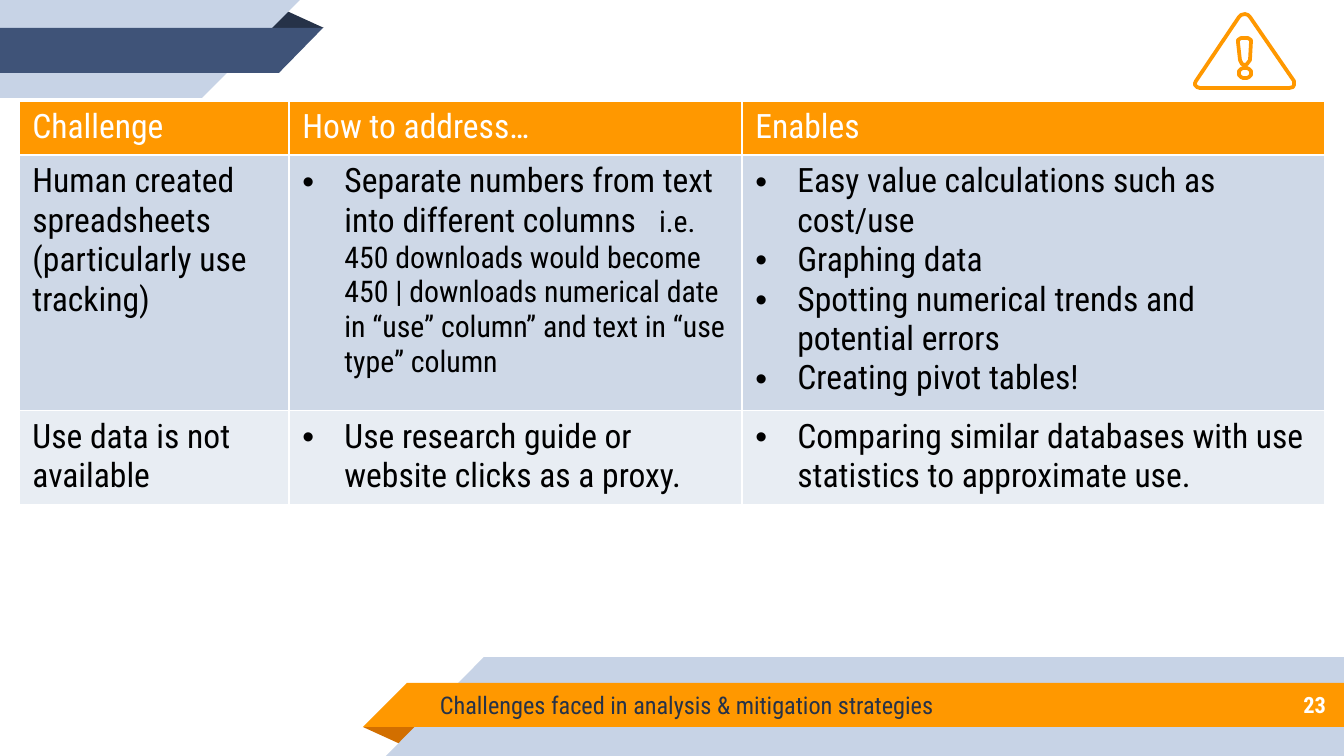
from dataclasses import dataclass
from math import cos, pi, sin

from lxml import etree
from pptx import Presentation
from pptx.dml.color import RGBColor
from pptx.enum.shapes import MSO_SHAPE
from pptx.enum.text import MSO_ANCHOR, PP_ALIGN
from pptx.oxml.ns import qn
from pptx.util import Emu, Pt

RECTANGLE = MSO_SHAPE.RECTANGLE
CORNER = MSO_SHAPE.RIGHT_TRIANGLE
TRIANGLE = MSO_SHAPE.ISOSCELES_TRIANGLE
MIDDLE = MSO_ANCHOR.MIDDLE
LEFT, RIGHT = PP_ALIGN.LEFT, PP_ALIGN.RIGHT

WHITE = RGBColor(0xFF, 0xFF, 0xFF)
BLACK = RGBColor(0x00, 0x00, 0x00)
ORANGE = RGBColor(0xFF, 0x98, 0x00)
DARK_ORANGE = RGBColor(0xD2, 0x6F, 0x00)
PALE_BLUE = RGBColor(0xC7, 0xD3, 0xE6)
BLUE = RGBColor(0x3F, 0x53, 0x78)
NAVY = RGBColor(0x26, 0x32, 0x48)
ROW_BLUE = RGBColor(0xCE, 0xD8, 0xE7)
ROW_GREY = RGBColor(0xE8, 0xED, 0xF3)

FONT = "Roboto Condensed"
EMU_PER_PX = 914400 / 134.4
INSET = 13
BULLET_INDENT = 42


@dataclass(frozen=True)
class Band:
    kind: MSO_SHAPE
    left: int
    top: int
    width: int
    height: int
    color: RGBColor
    flip: str = ""
    rotation: int = 0


@dataclass(frozen=True)
class Label:
    left: int
    width: int
    text: str
    size: int
    color: RGBColor
    align: PP_ALIGN
    bold: bool = False
    margin: int = 0
    indent: int = 0


@dataclass(frozen=True)
class Span:
    text: str
    size: int = 18
    tracking: int = 0


BANDS = (
    # Footer ribbon
    Band(TRIANGLE, 363, 727, 58, 18, DARK_ORANGE, rotation=180),
    Band(RECTANGLE, 484, 657, 860, 99, PALE_BLUE),
    Band(CORNER, 386, 657, 98, 99, PALE_BLUE, "flipH"),
    Band(RECTANGLE, 407, 683, 937, 44, ORANGE),
    Band(CORNER, 363, 683, 44, 44, ORANGE, "flipH"),
    # Header ribbon
    Band(TRIANGLE, 266, 10, 58, 18, NAVY),
    Band(RECTANGLE, 0, 0, 202, 98, PALE_BLUE),
    Band(CORNER, 202, 0, 98, 98, PALE_BLUE, "flipV"),
    Band(RECTANGLE, 0, 28, 279, 45, BLUE),
    Band(CORNER, 279, 28, 44, 45, BLUE, "flipV"),
)

LABELS = (
    Label(394, 883, "Challenges faced in analysis & mitigation strategies",
          13, NAVY, LEFT, margin=67, indent=-34),
    Label(1120, 219, "23", 12, WHITE, RIGHT, bold=True),
)

# Each cell is a list of paragraphs, each paragraph a list of spans
COLUMN_WIDTHS = (270, 453, 583)
ROW_HEIGHTS = (54, 250, 92)
ROW_FILLS = (ORANGE, ROW_BLUE, ROW_GREY)
ROWS = (
    ([[Span("Challenge")]], [[Span("How to address…")]], [[Span("Enables")]]),
    (
        [[Span("Human created spreadsheets (particularly use tracking)")]],
        [[Span("Separate numbers from text into different columns"),
          Span(" ", tracking=800),
          Span("i.e. 450 downloads would become 450 | downloads numerical date "
               "in “use” column” and text in “use type” column", 16)]],
        [[Span("Easy value calculations such as cost/use")],
         [Span("Graphing data")],
         [Span("Spotting numerical trends and potential errors")],
         [Span("Creating pivot tables!")]],
    ),
    (
        [[Span("Use data is not available")]],
        [[Span("Use research guide or website clicks as a proxy.")]],
        [[Span("Comparing similar databases with use statistics to approximate use.")]],
    ),
)

WARNING_EDGE = [(1294, 81), (1250, 17), (1248, 15), (1245, 14), (1241, 15),
                (1239, 17), (1196, 81), (1195, 83), (1195, 85), (1197, 87),
                (1200, 88), (1289, 88), (1293, 87), (1294, 85)]
WARNING_BAR = [(1251, 42), (1250, 60), (1247, 64), (1245, 65), (1242, 64),
               (1240, 60), (1238, 42), (1238, 40), (1241, 38), (1248, 38),
               (1251, 40)]
WARNING_DOT = [(round(1245 + 6 * cos(step * pi / 8), 2),
                round(73 + 5 * sin(step * pi / 8), 2)) for step in range(16)]


def px(length: int) -> Emu:
    return Emu(round(length * EMU_PER_PX))


def style_run(run, size: int, color: RGBColor, bold: bool = False) -> None:
    run.font.name = FONT
    run.font.size = Pt(size)
    run.font.bold = bold
    run.font.color.rgb = color


def set_indent(para, margin: int, indent: int) -> None:
    properties = para._p.get_or_add_pPr()
    properties.set("marL", str(px(margin)))
    properties.set("indent", str(px(indent)))


def draw_band(slide, band: Band) -> None:
    shape = slide.shapes.add_shape(band.kind, px(band.left), px(band.top),
                                   px(band.width), px(band.height))
    shape.shadow.inherit = False
    shape.fill.solid()
    shape.fill.fore_color.rgb = band.color
    shape.line.fill.background()
    shape.rotation = band.rotation
    if band.kind == TRIANGLE:
        shape.adjustments[0] = 0.32
    if band.flip:
        shape._element.spPr.find(qn("a:xfrm")).set(band.flip, "1")


def draw_label(slide, label: Label) -> None:
    box = slide.shapes.add_textbox(px(label.left), px(681), px(label.width), px(47))
    frame = box.text_frame
    frame.word_wrap = True
    frame.vertical_anchor = MIDDLE
    frame.margin_left = frame.margin_right = px(INSET)
    frame.margin_top = frame.margin_bottom = px(INSET)
    frame.text = label.text
    para = frame.paragraphs[0]
    para.alignment = label.align
    set_indent(para, label.margin, label.indent)
    style_run(para.runs[0], label.size, label.color, label.bold)


def add_borders(cell) -> None:
    properties = cell._tc.get_or_add_tcPr()
    for position, side in enumerate(("lnL", "lnR", "lnT", "lnB")):
        line = etree.Element(qn(f"a:{side}"), w=str(Pt(1)))
        fill = etree.SubElement(line, qn("a:solidFill"))
        etree.SubElement(fill, qn("a:srgbClr"), val=str(WHITE))
        properties.insert(position, line)


def add_bullet(para) -> None:
    set_indent(para, BULLET_INDENT, -BULLET_INDENT)
    properties = para._p.get_or_add_pPr()
    color = etree.SubElement(properties, qn("a:buClr"))
    etree.SubElement(color, qn("a:srgbClr"), val=str(BLACK))
    etree.SubElement(properties, qn("a:buFont"), typeface="Arial")
    etree.SubElement(properties, qn("a:buChar"), char="•")


def fill_cell(cell, paragraphs: list[list[Span]], fill: RGBColor,
              color: RGBColor, bulleted: bool) -> None:
    cell.fill.solid()
    cell.fill.fore_color.rgb = fill
    add_borders(cell)
    frame = cell.text_frame
    for index, spans in enumerate(paragraphs):
        para = frame.add_paragraph() if index else frame.paragraphs[0]
        if bulleted:
            add_bullet(para)
        for span in spans:
            run = para.add_run()
            run.text = span.text
            style_run(run, span.size, color)
            if span.tracking:
                run.font._element.set("spc", str(span.tracking))


def draw_table(slide) -> None:
    table = slide.shapes.add_table(
        len(ROWS), len(COLUMN_WIDTHS), px(19), px(101),
        px(sum(COLUMN_WIDTHS)), px(sum(ROW_HEIGHTS))).table
    table.first_row = table.horz_banding = False
    for column, width in zip(table.columns, COLUMN_WIDTHS):
        column.width = px(width)
    for row_index, cells in enumerate(ROWS):
        table.rows[row_index].height = px(ROW_HEIGHTS[row_index])
        is_body = row_index > 0
        for column_index, paragraphs in enumerate(cells):
            fill_cell(table.cell(row_index, column_index), paragraphs,
                      ROW_FILLS[row_index], BLACK if is_body else WHITE,
                      is_body and column_index > 0)


def draw_warning_sign(slide) -> None:
    builder = slide.shapes.build_freeform(*WARNING_EDGE[0], scale=EMU_PER_PX)
    builder.add_line_segments(WARNING_EDGE[1:])
    for contour in (WARNING_DOT, WARNING_BAR):
        builder.move_to(*contour[0])
        builder.add_line_segments(contour[1:])
    sign = builder.convert_to_shape()
    sign.shadow.inherit = False
    sign.fill.background()
    sign.line.color.rgb = ORANGE
    sign.line.width = Pt(2)


def main() -> None:
    deck = Presentation()
    deck.slide_width, deck.slide_height = px(1344), px(756)
    slide = deck.slides.add_slide(deck.slide_layouts[6])
    for band in BANDS:
        draw_band(slide, band)
    for label in LABELS:
        draw_label(slide, label)
    draw_table(slide)
    draw_warning_sign(slide)
    deck.save("out.pptx")


if __name__ == "__main__":
    main()
